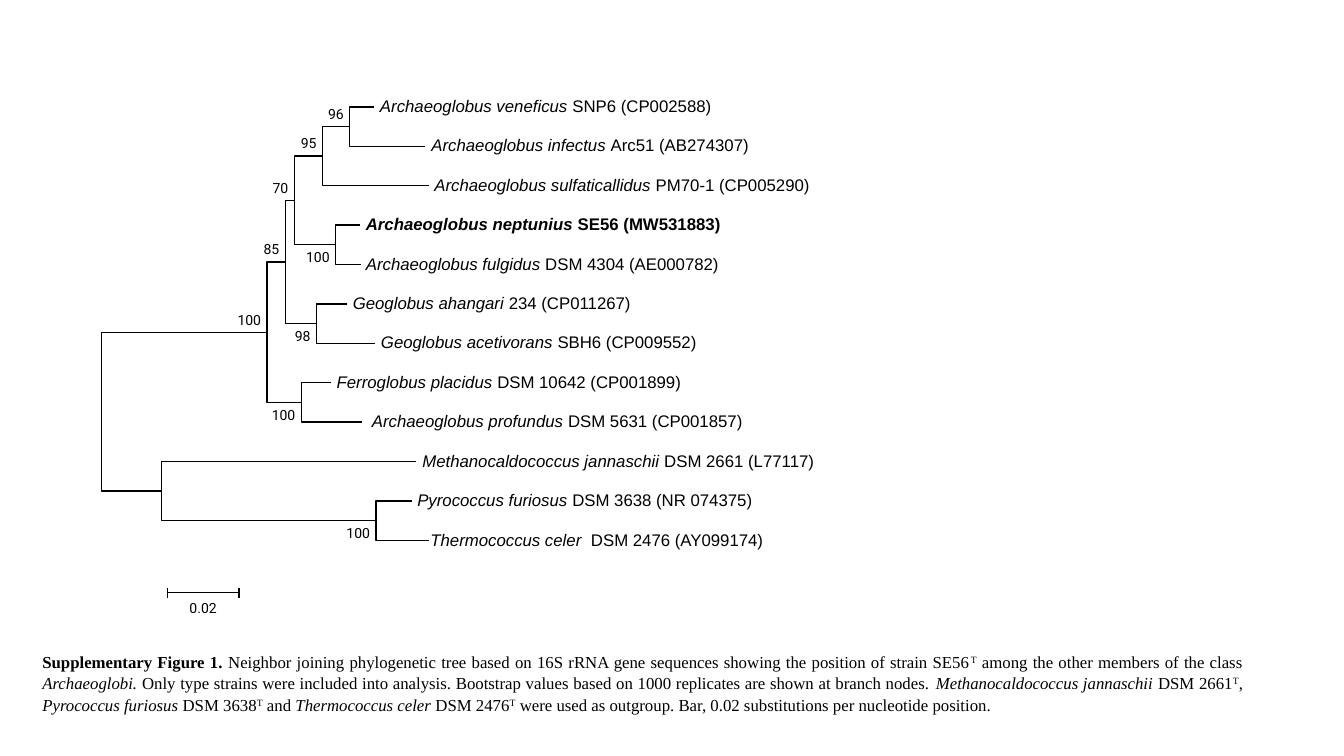
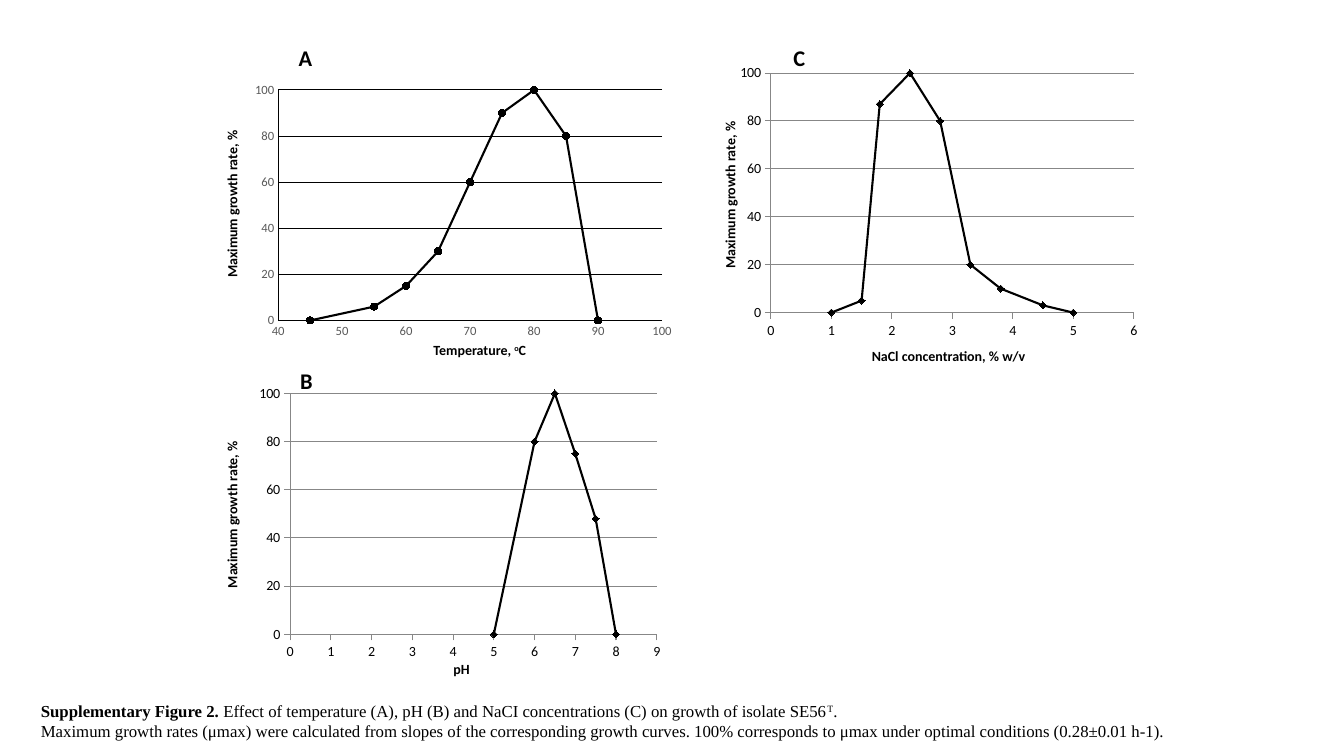
"""Build two supplementary figures: a phylogenetic tree and three growth charts."""
import dataclasses
import itertools

import pptx
import pptx.chart.data
import pptx.dml.color
import pptx.enum.chart
import pptx.enum.shapes
import pptx.enum.text
import pptx.oxml
import pptx.oxml.ns
import pptx.util
from lxml import etree

CELL = 0.1
BLACK, GREY, DIM = "000000", "878787", "595959"
SANS, LABEL, PLOT, SERIF = "Arial", "Roboto", "Calibri", "Times New Roman"
ALIGN = pptx.enum.text.PP_ALIGN
TICK = pptx.enum.chart.XL_TICK_MARK
MARK = pptx.enum.chart.XL_MARKER_STYLE
T = ("T", "^")


def ink(code):
    return pptx.dml.color.RGBColor.from_string(code)


def grid(cells):
    return pptx.util.Inches(cells * CELL)


@dataclasses.dataclass
class Leaf:
    x: float
    name: str
    strain: str
    gap: float = 0.6
    bold: bool = False


@dataclasses.dataclass
class Node:
    x: float
    score: str
    kids: tuple


@dataclasses.dataclass
class Panel:
    letter: str
    letter_at: tuple
    box: tuple
    plot: tuple
    points: tuple
    span: tuple
    title: list
    title_at: tuple
    rate_at: tuple
    tint: str = BLACK
    rule: str = GREY
    size: int = 10
    tick: int = TICK.OUTSIDE
    dot: int = MARK.DIAMOND


class Deck:
    def __init__(self):
        self.file = pptx.Presentation()
        self.file.slide_width = grid(133.33)
        self.file.slide_height = grid(75)

    def page(self):
        self.shapes = self.file.slides.add_slide(self.file.slide_layouts[6]).shapes

    def stroke(self, line, color=BLACK, width=1):
        line.color.rgb = ink(color)
        line.width = pptx.util.Pt(width)

    def text(self, box, paras, face, size, align=ALIGN.LEFT, bold=False, space=1):
        shape = self.shapes.add_textbox(*map(grid, box))
        frame = shape.text_frame
        frame.word_wrap = True
        frame.margin_left = frame.margin_right = 0
        frame.margin_top = frame.margin_bottom = 0
        for i, runs in enumerate(paras):
            para = frame.add_paragraph() if i else frame.paragraphs[0]
            para.alignment = align
            para.line_spacing = space
            para.font.name = face
            para.font.size = pptx.util.Pt(size)
            para.font.bold = bold
            para.font.color.rgb = ink(BLACK)
            for words, style in runs:
                run = para.add_run()
                run.text = words
                if "b" in style:
                    run.font.bold = True
                if "i" in style:
                    run.font.italic = True
                if "^" in style:
                    run._r.get_or_add_rPr().set("baseline", "30000")
        return shape

    def label(self, runs, at, size=10, turn=0):
        wide, high = 20, size / 6
        box = (at[0] - wide / 2, at[1] - high / 2, wide, high)
        shape = self.text(box, [runs], PLOT, size, ALIGN.CENTER, bold=True)
        shape.rotation = turn

    def caption(self, left, top, *paras, **style):
        self.text((left, top, 119.1, 5), paras, SERIF, 12, **style)

    def line(self, x1, y1, x2, y2):
        kind = pptx.enum.shapes.MSO_CONNECTOR.STRAIGHT
        rule = self.shapes.add_connector(kind, *map(grid, (x1, y1, x2, y2)))
        self.stroke(rule.line)
        etree.SubElement(rule._element.spPr, pptx.oxml.ns.qn("a:effectLst"))

    def elbow(self, x, y, end, level):
        pen = self.shapes.build_freeform(grid(x), grid(y))
        pen.add_line_segments(
            [(grid(x), grid(level)), (grid(end), grid(level))], close=False)
        shape = pen.convert_to_shape()
        shape.shadow.inherit = False
        shape.fill.background()
        self.stroke(shape.line)

    def tree(self, part, rows, low=False):
        if isinstance(part, Leaf):
            y = next(rows)
            runs = [(part.name, "i"), (part.strain, "")]
            self.text((part.x + part.gap, y - 1.1, 45, 2), [runs], SANS, 12,
                      bold=part.bold)
            return y
        levels = [self.tree(kid, rows, i > 0) for i, kid in enumerate(part.kids)]
        y = sum(levels) / len(levels)
        for kid, level in zip(part.kids, levels):
            self.elbow(part.x, y, kid.x, level)
        if part.score:
            top = y + 0.4 if low else y - 2.1
            self.text((part.x - 5.6, top, 5, 1.6), [[(part.score, "")]], LABEL, 10,
                      ALIGN.RIGHT)
        return y

    def scale(self, left, right, y, words):
        self.line(left, y, right, y)
        for x in (left, right):
            self.line(x, y - 0.5, x, y + 0.5)
        self.text((left, y + 0.7, right - left, 1.6), [[(words, "")]], LABEL, 10,
                  ALIGN.CENTER)

    def axis(self, axis, span, panel, lined):
        axis.minimum_scale, axis.maximum_scale, axis.major_unit = span
        axis.has_major_gridlines = lined
        axis.has_minor_gridlines = False
        axis.major_tick_mark = panel.tick
        axis.minor_tick_mark = TICK.NONE
        self.stroke(axis.format.line, panel.rule, 0.75)
        if lined:
            self.stroke(axis.major_gridlines.format.line, panel.rule, 0.75)

    def chart(self, panel):
        data = pptx.chart.data.XyChartData()
        series = data.add_series("Series 1")
        for x, y in panel.points:
            series.add_data_point(x, y)
        kind = pptx.enum.chart.XL_CHART_TYPE.XY_SCATTER_LINES
        chart = self.shapes.add_chart(kind, *map(grid, panel.box), data).chart
        chart.has_legend = False
        chart.has_title = False
        chart.font.name = PLOT
        chart.font.size = pptx.util.Pt(panel.size)
        chart.font.color.rgb = ink(panel.tint)
        self.axis(chart.category_axis, panel.span, panel, False)
        self.axis(chart.value_axis, (0, 100, 20), panel, True)
        plot = chart.plots[0]
        plot.vary_by_categories = False
        curve = plot.series[0]
        self.stroke(curve.format.line, BLACK, 1.5)
        curve.marker.style = panel.dot
        curve.marker.size = 5
        curve.marker.format.fill.solid()
        curve.marker.format.fill.fore_color.rgb = ink(BLACK)
        self.stroke(curve.marker.format.line, BLACK, 0.75)
        self.layout(chart, panel.plot)

    def layout(self, chart, shares):
        area = chart._chartSpace.chart.plotArea
        for old in area.findall(pptx.oxml.ns.qn("c:layout")):
            area.remove(old)
        parts = "".join(f'<c:{key} val="{share}"/>' for key, share in zip("xywh", shares))
        area.insert(0, pptx.oxml.parse_xml(
            f'<c:layout {pptx.oxml.ns.nsdecls("c")}><c:manualLayout>'
            '<c:layoutTarget val="inner"/><c:xMode val="edge"/><c:yMode val="edge"/>'
            f'{parts}</c:manualLayout></c:layout>'))

    def panel(self, panel):
        self.chart(panel)
        self.label([(panel.letter, "")], panel.letter_at, 16)
        self.label(panel.title, panel.title_at)
        self.label([("Maximum growth rate, %", "")], panel.rate_at, turn=270)


ARCHAEA = Node(26.5, "100", (
    Node(28.3, "85", (
        Node(29.2, "70", (
            Node(32, "95", (
                Node(34.7, "96", (
                    Leaf(37.1, "Archaeoglobus veneficus ", "SNP6 (CP002588)"),
                    Leaf(42.2, "Archaeoglobus infectus ", "Arc51 (AB274307)"))),
                Leaf(42.6, "Archaeoglobus sulfaticallidus ", "PM70-1 (CP005290)", 0.5))),
            Node(33.3, "100", (
                Leaf(35.7, "Archaeoglobus neptunius ", "SE56 (MW531883)", bold=True),
                Leaf(35.8, "Archaeoglobus fulgidus ", "DSM 4304 (AE000782)", 0.5))))),
        Node(31.4, "98", (
            Leaf(34.4, "Geoglobus ahangari ", "234 (CP011267)"),
            Leaf(37.2, "Geoglobus acetivorans ", "SBH6 (CP009552)"))))),
    Node(29.9, "100", (
        Leaf(32.8, "Ferroglobus placidus ", "DSM 10642 (CP001899)"),
        Leaf(35.9, "Archaeoglobus profundus ", "DSM 5631 (CP001857)", 1)))))

OUTGROUP = Node(16, "", (
    Leaf(41.3, "Methanocaldococcus jannaschii ", "DSM 2661 (L77117)"),
    Node(37.3, "100", (
        Leaf(40.9, "Pyrococcus furiosus ", "DSM 3638 (NR 074375)", 0.5),
        Leaf(42.6, "Thermococcus celer  ", "DSM 2476 (AY099174)", 0.1)))))

PANELS = (
    Panel("A", (30.3, 5.75), (24.6, 7.6, 42.8, 26.6), (0.07, 0.05, 0.89, 0.86),
          ((45, 0), (55, 6), (60, 15), (65, 30), (70, 60), (75, 90), (80, 100),
           (85, 80), (90, 0)),
          (40, 100, 10), [("Temperature, ", ""), ("o", "^"), ("C", "")],
          (47.6, 34.75), (23, 20.25), DIM, BLACK, 9, TICK.NONE, MARK.CIRCLE),
    Panel("B", (30.4, 37.75), (24.5, 37.6, 42.8, 28.8), (0.1, 0.05, 0.85, 0.83),
          ((5, 0), (6, 80), (6.5, 100), (7, 75), (7.5, 48), (8, 0)),
          (0, 9, 1), [("pH", "")], (45.8, 66.4), (23, 51.05)),
    Panel("C", (79.3, 5.75), (72.8, 6.4, 40.9, 28.3), (0.09, 0.03, 0.88, 0.84),
          ((1, 0), (1.5, 5), (1.8, 87), (2.3, 100), (2.8, 80), (3.3, 20), (3.8, 10),
           (4.5, 3), (5, 0)),
          (0, 6, 1), [("NaCl concentration, % w/v", "")], (94.1, 35.35), (72.4, 19.35)))


def main():
    deck = Deck()
    deck.page()
    deck.tree(Node(10.1, "", (ARCHAEA, OUTGROUP)), itertools.count(10.6, 3.91))
    deck.scale(16.6, 23.7, 58.8, "0.02")
    deck.caption(4.2, 64.5, [
        ("Supplementary Figure 1. ", "b"),
        ("Neighbor joining phylogenetic tree based on 16S rRNA gene sequences "
         "showing the position of strain SE56", ""), T,
        (" among the other members of the class ", ""), ("Archaeoglobi.", "i"),
        (" Only type strains were included into analysis. Bootstrap values based on "
         "1000 replicates are shown at branch nodes. ", ""),
        ("Methanocaldococcus jannaschii", "i"), (" DSM 2661", ""), T, (", ", ""),
        ("Pyrococcus furiosus", "i"), (" DSM 3638", ""), T, (" and ", ""),
        ("Thermococcus celer", "i"), (" DSM 2476", ""), T,
        (" were used as outgroup. Bar, 0.02 substitutions per nucleotide position.", ""),
    ], align=ALIGN.JUSTIFY, space=1.07)

    deck.page()
    for panel in PANELS:
        deck.panel(panel)
    deck.caption(4.05, 69.5, [
        ("Supplementary Figure 2. ", "b"),
        ("Effect of temperature (A), pH (B) and NaCI concentrations (C) on growth of "
         "isolate SE56", ""), T, (".", "")], [
        ("Maximum growth rates (μmax) were calculated from slopes of the corresponding "
         "growth curves. 100% corresponds to μmax under optimal conditions "
         "(0.28±0.01 h-1).", "")])
    deck.file.save("out.pptx")


if __name__ == "__main__":
    main()
